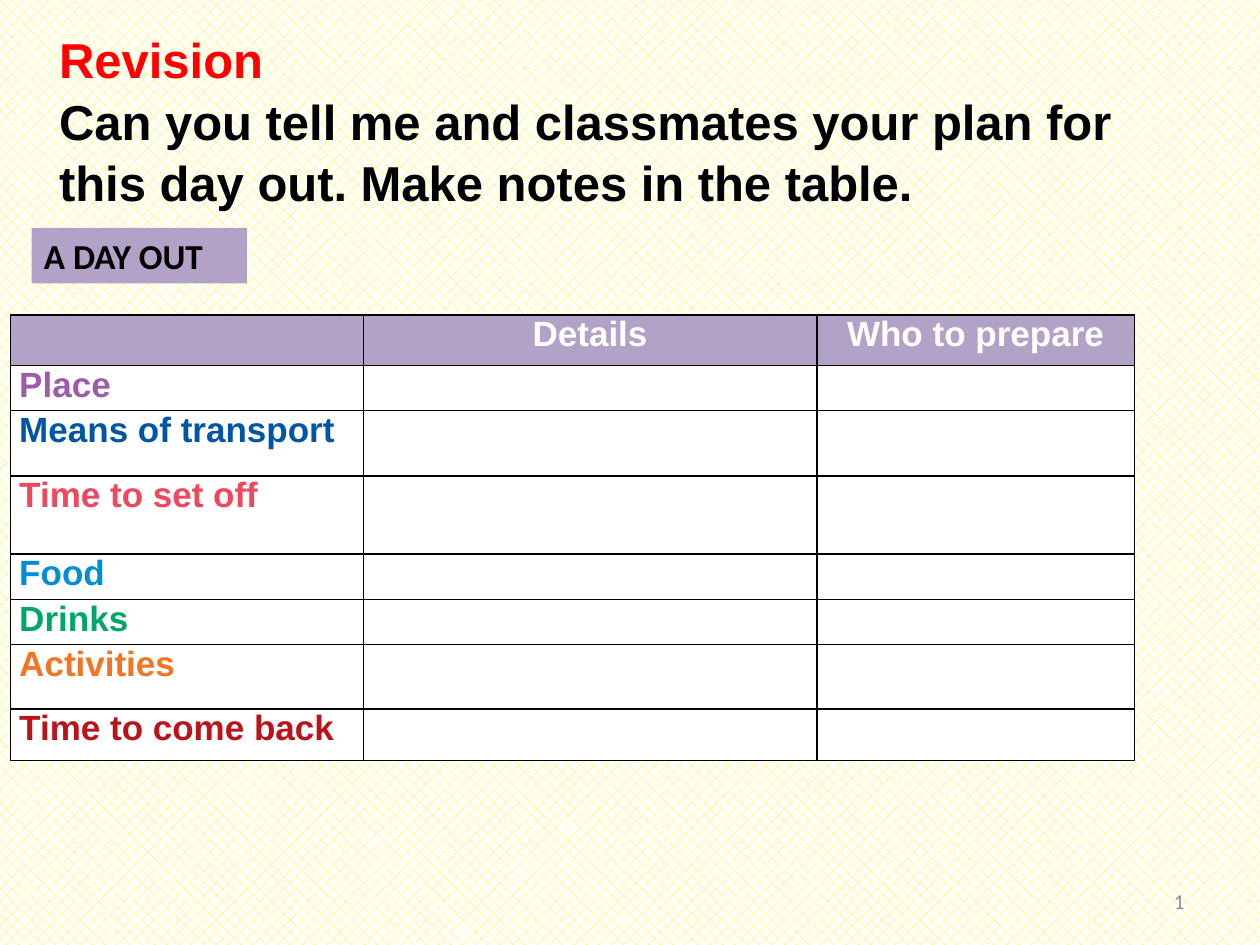
import pptx
import pptx.util
import pptx.dml.color
import pptx.enum.dml
import pptx.enum.shapes
import pptx.enum.text
import pptx.oxml
import pptx.oxml.ns
import lxml.etree

Pt = pptx.util.Pt
ALIGN = pptx.enum.text.PP_ALIGN
ANCHOR = pptx.enum.text.MSO_ANCHOR

COLORS = {
    "black": "000000", "white": "FFFFFF", "yellow": "FFFF00", "red": "FF0000",
    "lilac": "B3A2C7", "gray": "8C8C8C",
}
HEADINGS = ["", "Details", "Who to prepare"]
# Topic, text colour, row height
TOPICS = [
    ("Place", "9A5DA6", 25.9),
    ("Means of transport", "0055A7", 37.4),
    ("Time to set off", "EF475C", 44.6),
    ("Food", "008ED4", 25.9),
    ("Drinks", "00A665", 25.9),
    ("Activities", "F47521", 36.7),
    ("Time to come back", "BA1319", 29.5),
]
HEADING_HEIGHT = 28.8
COLUMN_WIDTHS = [201.6, 259.2, 181.4]


def rgb(value):
    return pptx.dml.color.RGBColor.from_string(value)


def write(paragraph, text, size=20, color=COLORS["black"], font="Arial",
          bold=True, align=ALIGN.LEFT, before=0, spacing=None):
    """Add a formatted run to a paragraph."""
    paragraph.alignment = align
    paragraph.space_before = Pt(before)
    if spacing:
        paragraph.line_spacing = spacing
    run = paragraph.add_run()
    run.text = text
    run.font.name = font
    run.font.size = Pt(size)
    run.font.bold = bold
    run.font.color.rgb = rgb(color)
    return run


def place(shape, left, top, width, height):
    shape.left, shape.top = Pt(left), Pt(top)
    shape.width, shape.height = Pt(width), Pt(height)


def paint_background(slide):
    fill = slide.background.fill
    fill.patterned()
    fill.pattern = pptx.enum.dml.MSO_PATTERN.PERCENT_30
    fill.fore_color.rgb = rgb(COLORS["yellow"])
    fill.back_color.rgb = rgb(COLORS["white"])


def add_title(slide):
    title = slide.shapes.title
    place(title, 26.6, 12.2, 656.6, 108.7)
    frame = title.text_frame
    frame.word_wrap = True
    frame.auto_size = pptx.enum.text.MSO_AUTO_SIZE.NONE
    frame.vertical_anchor = ANCHOR.TOP
    write(frame.paragraphs[0], "Revision", size=28, color=COLORS["red"], spacing=1.04)
    write(frame.add_paragraph(),
          "Can you tell me and classmates your plan for this day out. "
          "Make notes in the table.", size=28, spacing=1.04)


def add_label(slide, text):
    label = slide.shapes.add_shape(
        pptx.enum.shapes.MSO_SHAPE.RECTANGLE, Pt(18), Pt(130.3), Pt(123.1), Pt(31.7))
    label.shadow.inherit = False
    label.fill.solid()
    label.fill.fore_color.rgb = rgb(COLORS["lilac"])
    label.line.fill.background()
    label.text_frame.word_wrap = True
    label.text_frame.vertical_anchor = ANCHOR.TOP
    write(label.text_frame.paragraphs[0], text, font="Calibri", before=3)


def add_borders(cell):
    properties = cell._tc.get_or_add_tcPr()
    for position, side in enumerate(("lnL", "lnR", "lnT", "lnB")):
        properties.insert(position, pptx.oxml.parse_xml(
            f'<a:{side} {pptx.oxml.ns.nsdecls("a")} w="{Pt(1)}">'
            f'<a:solidFill><a:srgbClr val="{COLORS["black"]}"/></a:solidFill></a:{side}>'))


def format_cell(cell, fill):
    cell.margin_left = cell.margin_right = Pt(5)
    cell.margin_top = cell.margin_bottom = 0
    cell.fill.solid()
    cell.fill.fore_color.rgb = rgb(fill)
    add_borders(cell)


def add_plan_table(slide):
    heights = [HEADING_HEIGHT] + [height for _, _, height in TOPICS]
    plan = slide.shapes.add_table(
        len(heights), len(COLUMN_WIDTHS), Pt(6), Pt(180),
        Pt(sum(COLUMN_WIDTHS)), Pt(sum(heights))).table
    for column, width in zip(plan.columns, COLUMN_WIDTHS):
        column.width = Pt(width)
    for index, (row, height) in enumerate(zip(plan.rows, heights)):
        row.height = Pt(height)
        for cell in row.cells:
            format_cell(cell, COLORS["white"] if index else COLORS["lilac"])

    # Headings across, topics down
    for column, heading in enumerate(HEADINGS):
        if heading:
            write(plan.cell(0, column).text_frame.paragraphs[0], heading,
                  color=COLORS["white"], align=ALIGN.CENTER, before=3)
    for row, (topic, color, _) in enumerate(TOPICS, start=1):
        write(plan.cell(row, 0).text_frame.paragraphs[0], topic, color=color, before=3)


def add_slide_number(slide):
    number = slide.shapes.add_textbox(Pt(516.2), Pt(500.4), Pt(167.8), Pt(28.8))
    number.text_frame.word_wrap = True
    number.text_frame.vertical_anchor = ANCHOR.MIDDLE
    run = write(number.text_frame.paragraphs[0], "1", size=12, color=COLORS["gray"],
                font="Calibri", bold=False, align=ALIGN.RIGHT)
    # Turn the run into a slide number field
    field = lxml.etree.Element(pptx.oxml.ns.qn("a:fld"), {
        "id": "{B6F15528-21DE-4FAA-801E-634DDDAF4B2B}", "type": "slidenum"})
    run._r.addprevious(field)
    field.extend(list(run._r))
    field.getnext().getparent().remove(run._r)


def main():
    deck = pptx.Presentation()
    deck.slide_width, deck.slide_height = Pt(720), Pt(540)
    slide = deck.slides.add_slide(deck.slide_layouts[5])
    paint_background(slide)
    add_slide_number(slide)
    add_plan_table(slide)
    add_label(slide, "A DAY OUT")
    add_title(slide)
    deck.save("out.pptx")


if __name__ == "__main__":
    main()
